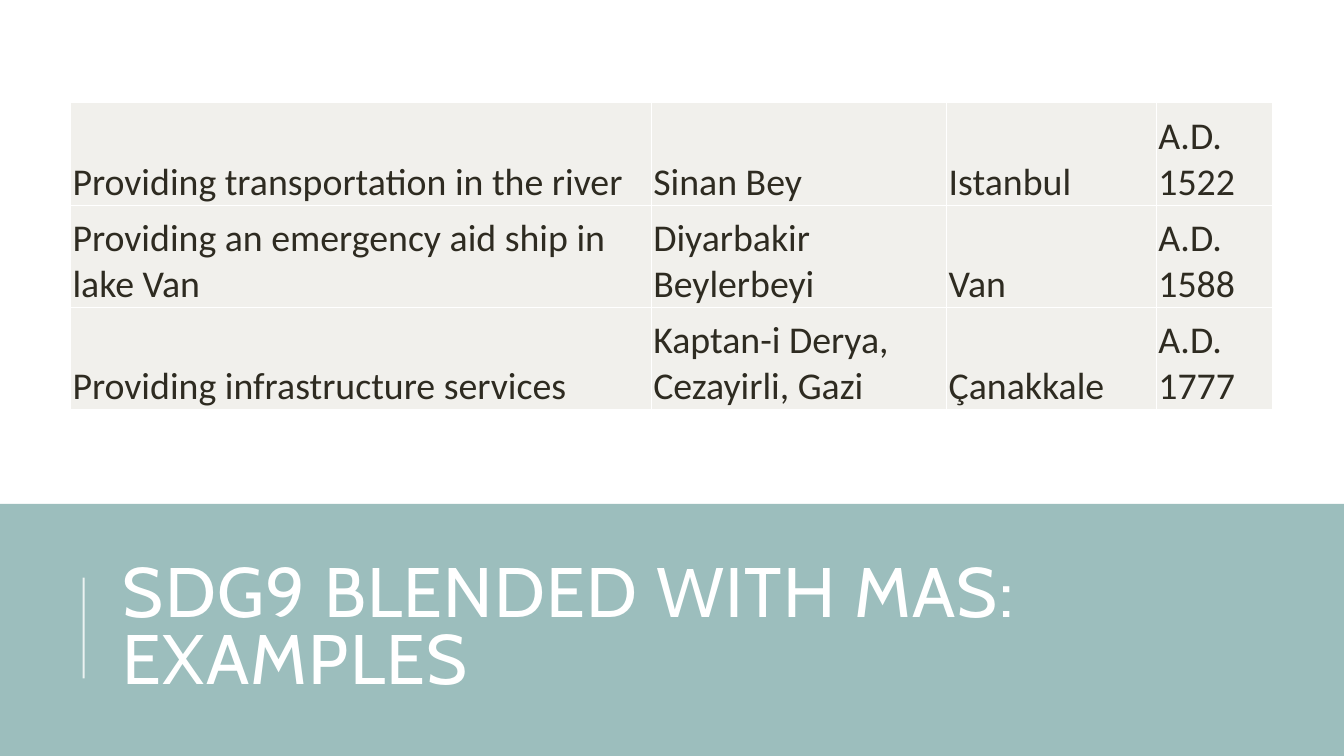
from lxml import etree
from pptx import Presentation
from pptx.dml.color import RGBColor
from pptx.enum import shapes, text
from pptx.oxml.ns import qn
from pptx.util import Inches, Pt

# Content
TITLE = "SDG9 BLENDED WITH MAS: EXAMPLES"
ROWS = [
    ("Providing transportation in the river", "Sinan Bey", "Istanbul", "A.D. 1522"),
    ("Providing an emergency aid ship in lake Van", "Diyarbakir Beylerbeyi", "Van", "A.D. 1588"),
    ("Providing infrastructure services", "Kaptan-i Derya, Cezayirli, Gazi", "Çanakkale", "A.D. 1777"),
]
COLORS = {"band": "9CBEBD", "white": "FFFFFF", "cell": "F1F0EC", "ink": "2E2B21"}
COL_WIDTHS = [5.76, 2.93, 2.08, 1.15]
ROW_HEIGHT = 1.015
SLIDE_W, SLIDE_H, BAND_TOP = 13.33, 7.5, 5


def rgb(name):
    return RGBColor.from_string(COLORS[name])


def style_run(r, font, size, color):
    r.font.name, r.font.size = font, Pt(size)
    r.font.color.rgb = rgb(color)


def add_borders(cell):
    tcPr = cell._tc.get_or_add_tcPr()
    for i, side in enumerate(("lnL", "lnR", "lnT", "lnB")):
        ln = etree.Element(qn("a:" + side), w=str(Pt(1)))
        fill = etree.SubElement(ln, qn("a:solidFill"))
        etree.SubElement(fill, qn("a:srgbClr"), val=COLORS["white"])
        tcPr.insert(i, ln)  # borders come before the cell fill


prs = Presentation()
prs.slide_width, prs.slide_height = Inches(SLIDE_W), Inches(SLIDE_H)
s = prs.slides.add_slide(prs.slide_layouts[6])

# Title band
band = s.shapes.add_shape(shapes.MSO_SHAPE.RECTANGLE, 0, Inches(BAND_TOP),
                          Inches(SLIDE_W), Inches(SLIDE_H - BAND_TOP))
band.shadow.inherit = False
band.fill.solid()
band.fill.fore_color.rgb = rgb("band")
band.line.fill.background()

# Title
tf = s.shapes.add_textbox(Inches(1.12), Inches(5.44), Inches(10.63), Inches(1.64)).text_frame
tf.word_wrap = True
tf.vertical_anchor = text.MSO_ANCHOR.MIDDLE
tf.text = TITLE
p = tf.paragraphs[0]
p.line_spacing = 0.8
style_run(p.runs[0], "Cabin", 50, "white")
p.runs[0].font._element.set("spc", "100")

# Accent line beside the title
accent = s.shapes.add_connector(shapes.MSO_CONNECTOR.STRAIGHT, Inches(0.83), Inches(6.73),
                                Inches(0.83), Inches(5.73))
accent.line.width = Pt(1.5)
accent.line.color.rgb = rgb("white")
spPr = accent._element.spPr
etree.SubElement(spPr.find(".//" + qn("a:srgbClr")), qn("a:alpha"), val="80000")
etree.SubElement(spPr, qn("a:effectLst"))

# Table of examples
table = s.shapes.add_table(len(ROWS), len(COL_WIDTHS), Inches(0.7), Inches(1.02),
                           Inches(sum(COL_WIDTHS)), Inches(ROW_HEIGHT * len(ROWS))).table
table.first_row = table.horz_banding = False
for col, width in zip(table.columns, COL_WIDTHS):
    col.width = Inches(width)
for i, row in enumerate(ROWS):
    for j, value in enumerate(row):
        cell = table.cell(i, j)
        cell.text = value
        cell.vertical_anchor = text.MSO_ANCHOR.BOTTOM
        cell.margin_left = cell.margin_right = cell.margin_top = Inches(0.02)
        cell.margin_bottom = 0
        cell.fill.solid()
        cell.fill.fore_color.rgb = rgb("cell")
        style_run(cell.text_frame.paragraphs[0].runs[0], "Calibri", 27, "ink")
        add_borders(cell)

prs.save("out.pptx")
